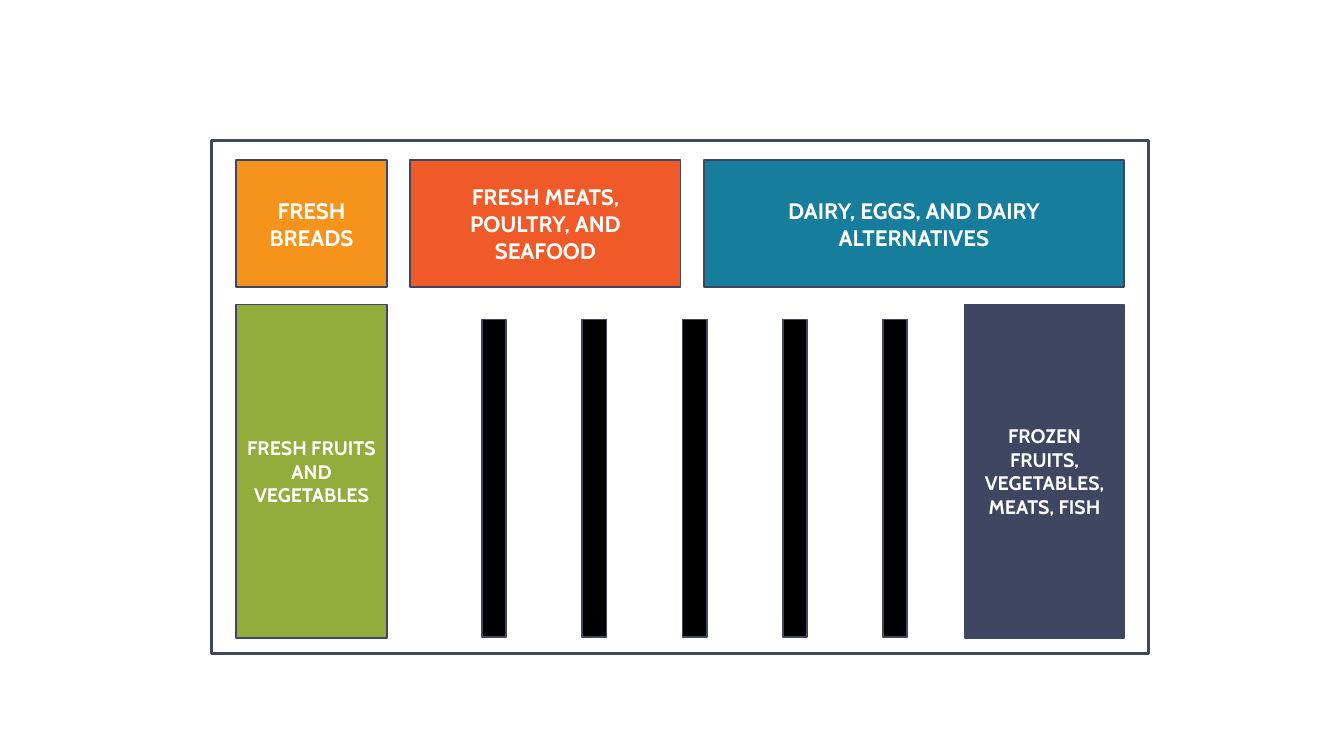
import pptx
import pptx.util
import pptx.dml.color
import pptx.enum.shapes
import pptx.enum.text


class Theme:
    font = "Cabin"
    navy, white, black = "3E4662", "FFFFFF", "000000"
    orange, red, teal, green = "F6931D", "F05A28", "167D9D", "92AD3C"
    large, small = 16, 14
    thin, thick = 1.25, 2.25


# Content: departments as (label, width, fill)
BACK_WALL = [
    ("FRESH BREADS", 1.5, Theme.orange),
    ("FRESH MEATS, POULTRY, AND SEAFOOD", 2.68, Theme.red),
    ("DAIRY, EGGS, AND DAIRY ALTERNATIVES", 4.17, Theme.teal),
]
LEFT_WALL = ("FRESH FRUITS AND VEGETABLES", 1.5, Theme.green)
RIGHT_WALL = ("FROZEN FRUITS, VEGETABLES, MEATS, FISH", 1.58, Theme.navy)
AISLES = 5

# Floor plan, in inches
SLIDE_W, SLIDE_H = 13.33, 7.5
STORE = (2.1, 1.39, 9.29, 5.09)
LEFT, GAP = 2.34, 0.23
BACK_TOP, BACK_H = 1.59, 1.26
SIDE_TOP, SIDE_H = 3.02, 3.31
AISLE_LEFT, AISLE_RIGHT, AISLE_W = 4.78, 8.76, 0.24
AISLE_TOP, AISLE_H = 3.17, 3.15


def color(value):
    return pptx.dml.color.RGBColor.from_string(value)


def add_block(shapes, box, fill=None, line=Theme.thin, label="", size=Theme.small):
    sp = shapes.add_shape(pptx.enum.shapes.MSO_SHAPE.RECTANGLE,
                          *[pptx.util.Inches(v) for v in box])
    sp.shadow.inherit = False
    if fill:
        sp.fill.solid()
        sp.fill.fore_color.rgb = color(fill)
    else:
        sp.fill.background()
    sp.line.color.rgb = color(Theme.navy)
    sp.line.width = pptx.util.Pt(line)
    if label:
        tf = sp.text_frame
        tf.text = label
        tf.word_wrap = True
        tf.vertical_anchor = pptx.enum.text.MSO_ANCHOR.MIDDLE
        p = tf.paragraphs[0]
        p.alignment = pptx.enum.text.PP_ALIGN.CENTER
        font = p.runs[0].font
        font.name, font.bold = Theme.font, True
        font.size = pptx.util.Pt(size)
        font.color.rgb = color(Theme.white)


def main():
    prs = pptx.Presentation()
    prs.slide_width = pptx.util.Inches(SLIDE_W)
    prs.slide_height = pptx.util.Inches(SLIDE_H)
    s = prs.slides.add_slide(prs.slide_layouts[6])
    shapes = s.shapes.add_group_shape().shapes

    # Departments along the back wall
    x = LEFT
    for label, width, fill in BACK_WALL:
        add_block(shapes, (x, BACK_TOP, width, BACK_H), fill,
                  label=label, size=Theme.large)
        x += width + GAP
    right = x - GAP

    # Departments along the side walls
    for (label, width, fill), x in ((LEFT_WALL, LEFT),
                                    (RIGHT_WALL, right - RIGHT_WALL[1])):
        add_block(shapes, (x, SIDE_TOP, width, SIDE_H), fill, label=label)

    # Evenly spaced aisles
    step = (AISLE_RIGHT - AISLE_LEFT) / (AISLES - 1)
    for i in range(AISLES):
        add_block(shapes, (AISLE_LEFT + i * step, AISLE_TOP, AISLE_W, AISLE_H),
                  Theme.black)

    # Store outline
    add_block(shapes, STORE, line=Theme.thick)

    prs.save("out.pptx")


if __name__ == "__main__":
    main()
